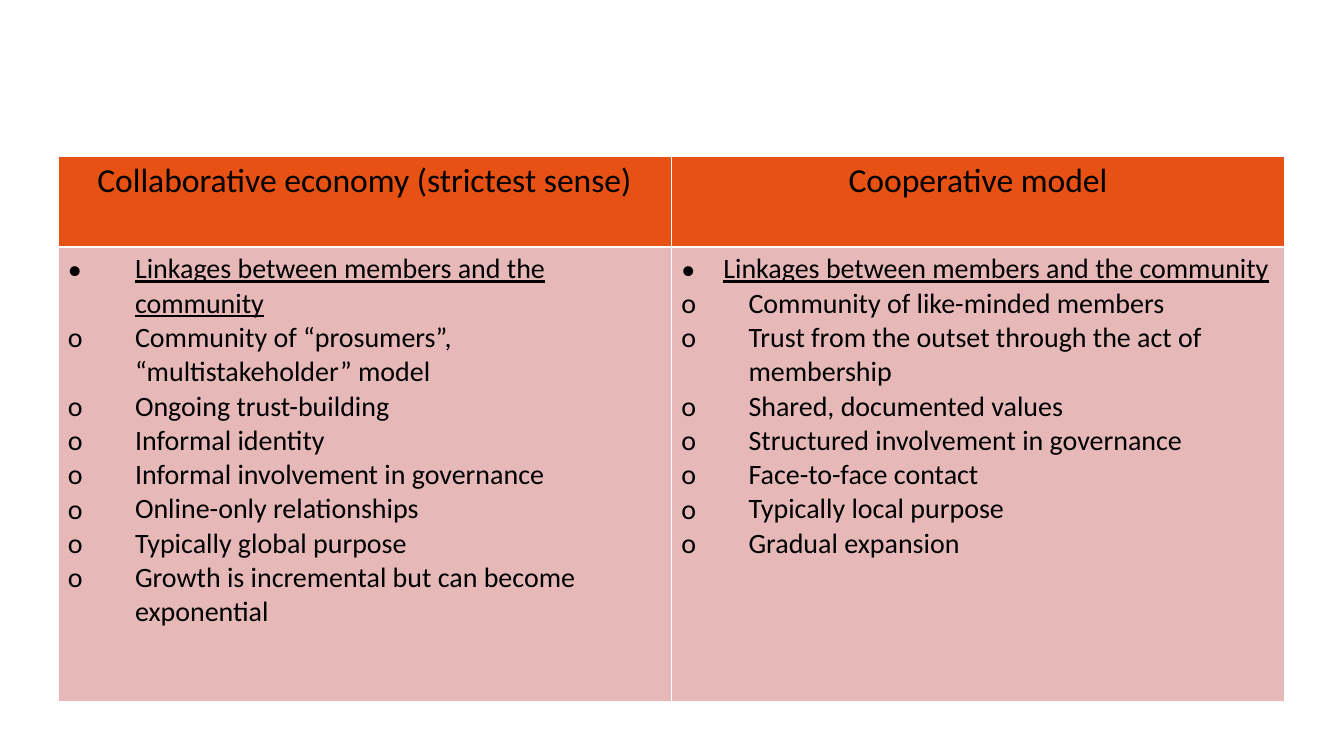
from lxml import etree
from pptx import Presentation
from pptx.dml.color import RGBColor
from pptx.enum.text import PP_ALIGN
from pptx.oxml.ns import qn
from pptx.util import Inches, Pt

CENTER = PP_ALIGN.CENTER
LEFT = PP_ALIGN.LEFT

THEME = {
    "font": "Calibri",
    "text": "000000",
    "header": "E75113",
    "body": "E6B9B8",
    "border": "FFFFFF",
    "header_size": 18,
    "body_size": 15,
}

TOPIC = "Linkages between members and the community"
TOPIC_END = " "
MODELS = [
    {
        "name": "Collaborative economy (strictest sense)",
        "topic_indent": Pt(36),
        "traits": [
            "Community of “prosumers”, “multistakeholder” model",
            "Ongoing trust-building",
            "Informal identity",
            "Informal involvement in governance",
            "Online-only relationships",
            "Typically global purpose",
            "Growth is incremental but can become exponential",
        ],
    },
    {
        "name": "Cooperative model",
        "topic_indent": Pt(22.5),
        "traits": [
            "Community of like-minded members",
            "Trust from the outset through the act of membership",
            "Shared, documented values",
            "Structured involvement in governance",
            "Face-to-face contact",
            "Typically local purpose",
            "Gradual expansion",
        ],
    },
]

SLIDE_WIDTH = 10
TABLE_LEFT, TABLE_TOP, TABLE_WIDTH = 0.43, 1.16, 9.13
ROW_HEIGHTS = [0.68, 3.38]
TRAIT_INDENT = Pt(36)


def write(paragraph, text, size, align=LEFT, bullet=None, indent=0, underline=False, ending=""):
    paragraph.alignment = align
    if bullet:
        properties = paragraph._p.get_or_add_pPr()
        properties.set("marL", str(indent))
        properties.set("indent", str(-indent))
        etree.SubElement(properties, qn("a:buFont"), typeface=THEME["font"])
        etree.SubElement(properties, qn("a:buChar"), char=bullet)
    for part, underlined in ((text, underline), (ending, False)):
        if part:
            run = paragraph.add_run()
            run.text = part
            run.font.name = THEME["font"]
            run.font.size = Pt(size)
            run.font.underline = underlined
            run.font.color.rgb = RGBColor.from_string(THEME["text"])
    etree.SubElement(paragraph._p, qn("a:endParaRPr"), sz=str(size * 100))


def style_cell(cell, fill):
    cell.margin_left = cell.margin_right = Pt(5.4)
    cell.margin_top = cell.margin_bottom = Pt(2.7)
    properties = cell._tc.get_or_add_tcPr()
    for side in ("lnL", "lnR", "lnT", "lnB"):
        line = etree.SubElement(properties, qn(f"a:{side}"), w=str(Pt(1)))
        solid = etree.SubElement(line, qn("a:solidFill"))
        etree.SubElement(solid, qn("a:srgbClr"), val=THEME["border"])
    cell.fill.solid()
    cell.fill.fore_color.rgb = RGBColor.from_string(fill)


def fill_column(table, column, model):
    header, body = table.cell(0, column), table.cell(1, column)
    style_cell(header, THEME["header"])
    style_cell(body, THEME["body"])
    write(header.text_frame.paragraphs[0], model["name"], THEME["header_size"], align=CENTER)
    write(body.text_frame.paragraphs[0], TOPIC, THEME["body_size"], bullet="•",
          indent=model["topic_indent"], underline=True, ending=TOPIC_END)
    for trait in model["traits"]:
        write(body.text_frame.add_paragraph(), trait, THEME["body_size"],
              bullet="o", indent=TRAIT_INDENT)


def main():
    deck = Presentation()
    deck.slide_width, deck.slide_height = Inches(SLIDE_WIDTH), Inches(SLIDE_WIDTH * 9 / 16)
    slide = deck.slides.add_slide(deck.slide_layouts[6])
    table = slide.shapes.add_table(
        len(ROW_HEIGHTS), len(MODELS), Inches(TABLE_LEFT), Inches(TABLE_TOP),
        Inches(TABLE_WIDTH), Inches(sum(ROW_HEIGHTS))).table
    for row, height in zip(table.rows, ROW_HEIGHTS):
        row.height = Inches(height)
    for column, model in enumerate(MODELS):
        fill_column(table, column, model)
    deck.save("out.pptx")


if __name__ == "__main__":
    main()
